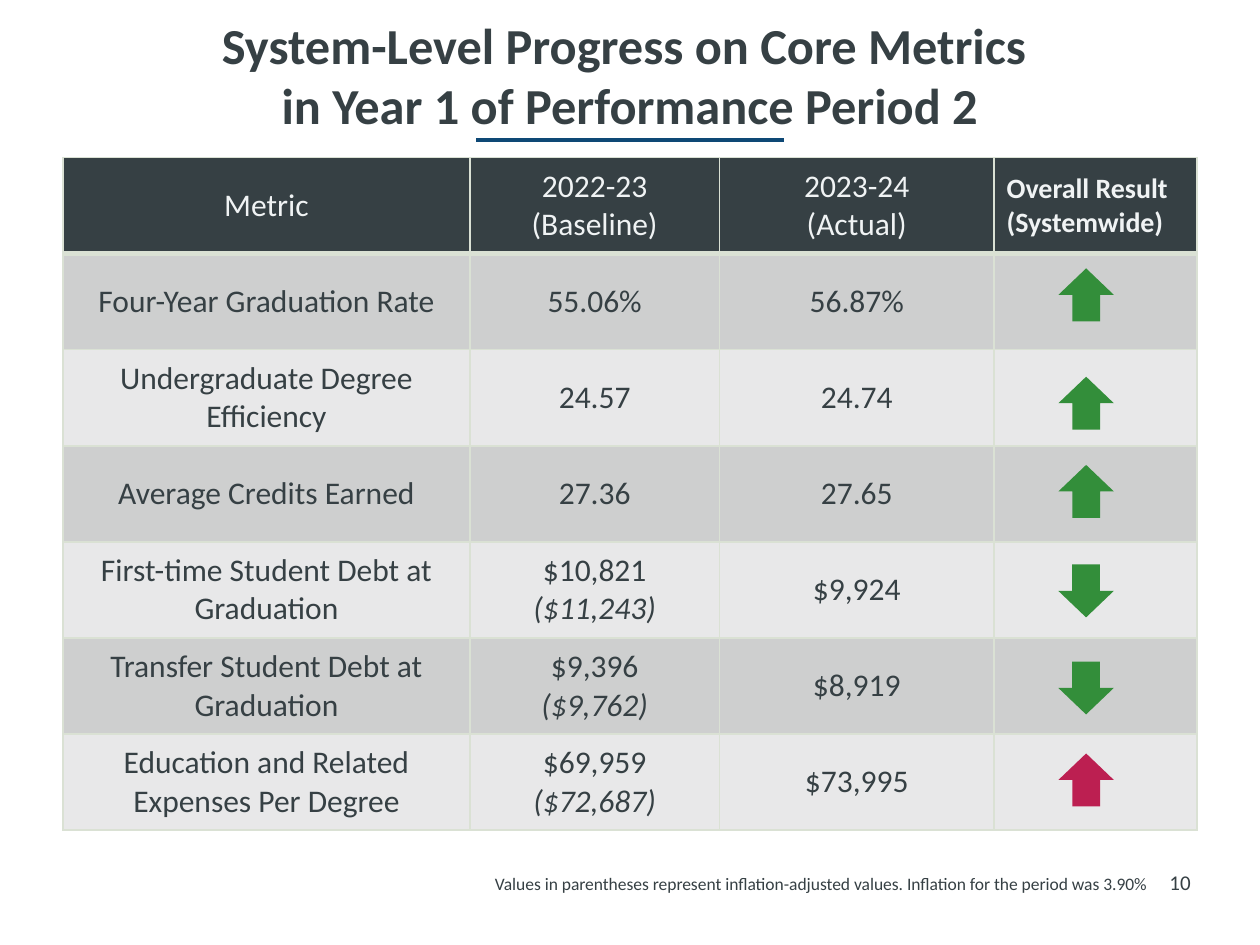
from lxml.etree import SubElement as Sub
from pptx import Presentation
from pptx.dml.color import RGBColor as RGB
from pptx.enum.shapes import MSO_CONNECTOR as Link, MSO_SHAPE as Shape
from pptx.enum.text import MSO_ANCHOR as Anchor, PP_ALIGN as Align
from pptx.oxml.ns import qn
from pptx.util import Inches, Pt

HUES = {"ink": "364044", "pale": "F0F3F4", "edge": "DAE1D4", "dark": "CECFCF",
        "light": "E8E8E9", "rule": "0E4875", "good": "338E3A", "bad": "BC1F51"}
TITLE = ["System-Level Progress on Core Metrics ", "in Year 1 of Performance Period 2"]
HEAD = [["Metric"], ["2022-23", "(Baseline)"], ["2023-24", "(Actual)"],
        ["Overall Result (Systemwide)"]]
ROWS = [
    [["Four-Year Graduation Rate"], ["55.06%"], ["56.87%"], []],
    [["Undergraduate Degree Efficiency"], ["24.57"], ["24.74"], []],
    [["Average Credits Earned"], ["27.36"], ["27.65"], []],
    [["First-time Student Debt at Graduation"], ["$10,821", "($11,243)"], ["$9,924"], []],
    [["Transfer Student Debt at Graduation"], ["$9,396", "($9,762)"], ["$8,919"], []],
    [["Education and Related Expenses Per Degree"], ["$69,959", "($72,687)"], ["$73,995"], []],
]
ARROWS = [(2.13, "up", "good"), (2.99, "up", "good"), (3.69, "up", "good"),
          (4.48, "down", "good"), (5.25, "down", "good"), (5.98, "up", "bad")]
WIDTHS = [3.23, 1.98, 2.18, 1.61]
HIGH = 5.34
NOTE = ("Values in parentheses represent inflation-adjusted values. "
        "Inflation for the period was 3.90%")


def hue(name):
    return RGB.from_string(HUES[name])


def write(para, text, size, color="ink", bold=False, slant=False):
    run = para.add_run()
    run.text = text
    font = run.font
    font.name, font.size, font.bold, font.italic = "Calibri", Pt(size), bold, slant
    font.color.rgb = hue(color)


def add_box(slide, place, align, inset=True):
    frame = slide.shapes.add_textbox(*map(Inches, place)).text_frame
    frame.word_wrap = True
    if not inset:
        frame.margin_left = frame.margin_right = frame.margin_top = frame.margin_bottom = 0
    para = frame.paragraphs[0]
    para.alignment = align
    return para


def add_edges(cell, row):
    props = cell._tc.get_or_add_tcPr()
    for side in "LRTB":
        thick = (row, side) in ((0, "B"), (1, "T"))
        line = Sub(props, qn("a:ln" + side), w=str(Pt(3 if thick else 1)))
        Sub(Sub(line, qn("a:solidFill")), qn("a:srgbClr"), val=HUES["edge"])


def fill_cell(cell, row, col, lines):
    add_edges(cell, row)
    cell.fill.solid()
    cell.fill.fore_color.rgb = hue("ink" if row == 0 else "dark" if row % 2 else "light")
    cell.vertical_anchor = Anchor.MIDDLE
    last = col == len(WIDTHS) - 1
    if not last:
        cell.margin_left = cell.margin_right = cell.margin_top = cell.margin_bottom = 0
    frame = cell.text_frame
    for num, text in enumerate(lines):
        para = frame.add_paragraph() if num else frame.paragraphs[0]
        para.alignment = Align.LEFT if last else Align.CENTER
        write(para, text, 16 if last else 18, "ink" if row else "pale",
              last, row > 0 and num > 0)


def add_grid(slide):
    data = [HEAD] + ROWS
    grid = slide.shapes.add_table(len(data), len(WIDTHS), Inches(0.5), Inches(1.25),
                                  Inches(sum(WIDTHS)), Inches(HIGH)).table
    for col, wide in zip(grid.columns, WIDTHS):
        col.width = Inches(wide)
    for r, cells in enumerate(data):
        grid.rows[r].height = Inches(HIGH / len(data))
        for c, lines in enumerate(cells):
            fill_cell(grid.cell(r, c), r, c, lines)


def add_arrow(slide, top, way, color):
    arrow = slide.shapes.add_shape(Shape.DOWN_ARROW, *map(Inches, (8.4, top, 0.44, 0.42)))
    arrow.rotation = 180 if way == "up" else 0
    arrow.shadow.inherit = False
    arrow.fill.solid()
    arrow.fill.fore_color.rgb = hue(color)
    arrow.line.fill.background()


def main():
    deck = Presentation()
    deck.slide_width, deck.slide_height = Inches(10), Inches(7.5)
    slide = deck.slides.add_slide(deck.slide_layouts[6])

    rule = slide.shapes.add_connector(Link.STRAIGHT, *map(Inches, (3.78, 1.11, 6.22, 1.11)))
    rule.line.color.rgb = hue("rule")
    rule.line.width = Pt(2)
    Sub(rule._element.spPr, qn("a:effectLst"))

    title = add_box(slide, (0.5, 0.06, 9, 0.81), Align.CENTER)
    write(title, TITLE[0], 28.8, bold=True)
    title.add_line_break()
    write(title, TITLE[1], 28.8, bold=True)

    add_grid(slide)
    write(add_box(slide, (9, 6.9, 0.45, 0.22), Align.RIGHT, False), "10", 12)
    for arrow in ARROWS:
        add_arrow(slide, *arrow)
    write(add_box(slide, (3.83, 6.88, 5.53, 0.27), Align.LEFT), NOTE, 10)
    deck.save("out.pptx")


if __name__ == "__main__":
    main()
